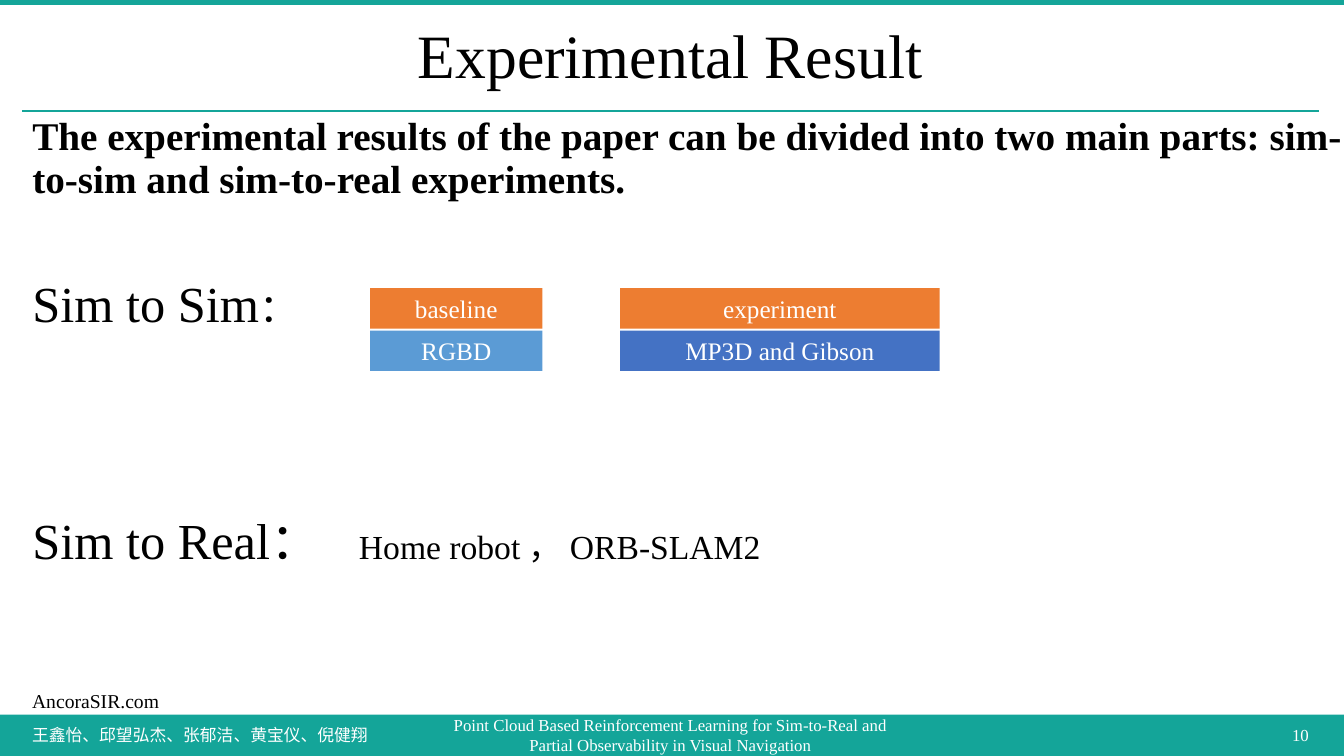
from dataclasses import dataclass

from lxml.etree import SubElement
from pptx import Presentation
from pptx.dml.color import RGBColor
from pptx.enum.shapes import MSO_CONNECTOR, MSO_SHAPE
from pptx.enum.text import MSO_ANCHOR, MSO_AUTO_SIZE, PP_ALIGN
from pptx.oxml.ns import qn
from pptx.util import Inches, Pt

FONT = "Times New Roman"
TEAL, WHITE, BLACK, ORANGE = "14A599", "FFFFFF", "000000", "ED7D31"
LEFT, WIDTH = 0.22, 12.86
FOOTER_TOP, FOOTER_HEIGHT = 7.09, 0.4
BOX_TOP, BOX_HEIGHT, BOX_STEP = 2.86, 0.4, 0.42


@dataclass
class Label:
    text: str
    left: float
    top: float
    width: float
    height: float
    size: int = 12
    color: str = WHITE
    align: PP_ALIGN = PP_ALIGN.LEFT
    wrap: bool = True


@dataclass
class BoxColumn:
    left: float
    width: float
    rows: list[tuple[str, str]]


@dataclass
class BodyRun:
    text: str
    size: int
    spacing: int = 0


@dataclass
class BodyLine:
    runs: list[BodyRun]
    before: int = 0
    bold: bool = False


LABELS = [
    Label("AncoraSIR.com", LEFT, 6.78, 1.47, 0.34, 14, BLACK, wrap=False),
    Label("10", 8.25, FOOTER_TOP, 4.83, FOOTER_HEIGHT, align=PP_ALIGN.RIGHT),
    Label("Point Cloud Based Reinforcement Learning for Sim-to-Real and "
          "Partial Observability in Visual Navigation",
          4.4, FOOTER_TOP, 4.5, FOOTER_HEIGHT, align=PP_ALIGN.CENTER),
    Label("王鑫怡、邱望弘杰、张郁洁、黄宝仪、倪健翔",
          LEFT, FOOTER_TOP, 4.86, FOOTER_HEIGHT),
]
COLUMNS = [
    BoxColumn(3.67, 1.71, [("baseline", ORANGE), ("RGBD", "5B9BD5")]),
    BoxColumn(6.15, 3.17, [("experiment", ORANGE), ("MP3D and Gibson", "4472C4")]),
]
BODY = [
    BodyLine([BodyRun("The experimental results of the paper can be divided into two "
                      "main parts: sim-to-sim and sim-to-real experiments.", 28)],
             bold=True),
    BodyLine([BodyRun("Sim to Sim", 36), BodyRun("：", 28)], before=55),
    BodyLine([BodyRun("Sim to Real：", 36), BodyRun(" ", 28, spacing=21),
              BodyRun("Home robot ， ORB-SLAM2", 24)], before=131),
]


def rgb(color: str) -> RGBColor:
    return RGBColor.from_string(color)


def style(font, size: int, color: str, bold: bool = False) -> None:
    font.name = FONT
    font.size = Pt(size)
    font.bold = bold
    font.color.rgb = rgb(color)


def place(sp, left: float, top: float, width: float, height: float) -> None:
    sp.left, sp.top = Inches(left), Inches(top)
    sp.width, sp.height = Inches(width), Inches(height)


def set_text(sp, text: str, size: int, color: str, align: PP_ALIGN) -> None:
    tf = sp.text_frame
    tf.text = text
    tf.vertical_anchor = MSO_ANCHOR.MIDDLE
    p = tf.paragraphs[0]
    p.alignment = align
    style(p.runs[0].font, size, color)


def add_rect(s, left: float, top: float, width: float, height: float, color: str):
    sp = s.shapes.add_shape(MSO_SHAPE.RECTANGLE, Inches(left), Inches(top),
                            Inches(width), Inches(height))
    sp.shadow.inherit = False
    sp.fill.solid()
    sp.fill.fore_color.rgb = rgb(color)
    sp.line.fill.background()
    return sp


def add_label(s, label: Label) -> None:
    sp = s.shapes.add_textbox(Inches(label.left), Inches(label.top),
                              Inches(label.width), Inches(label.height))
    sp.text_frame.word_wrap = label.wrap
    set_text(sp, label.text, label.size, label.color, label.align)


def add_body_line(p, line: BodyLine) -> None:
    pPr = p._p.get_or_add_pPr()
    pPr.set("marL", "0")
    pPr.set("indent", "0")
    SubElement(pPr, qn("a:buNone"))
    p.line_spacing = 0.9
    p.space_before = Pt(line.before)
    for run in line.runs:
        r = p.add_run()
        r.text = run.text
        style(r.font, run.size, BLACK, line.bold)
        if run.spacing:
            r._r.get_or_add_rPr().set("spc", str(run.spacing * 100))


def main() -> None:
    prs = Presentation()
    prs.slide_width, prs.slide_height = Inches(13.33), Inches(7.5)
    s = prs.slides.add_slide(prs.slide_layouts[1])
    title, body = s.shapes.title, s.placeholders[1]

    # Teal background with a white panel and a rule under the title
    s.background.fill.solid()
    s.background.fill.fore_color.rgb = rgb(TEAL)
    panel = add_rect(s, 0, 0.05, 13.33, 7.04, WHITE)
    rule = s.shapes.add_connector(MSO_CONNECTOR.STRAIGHT, Inches(LEFT), Inches(1.1),
                                  Inches(LEFT + WIDTH), Inches(1.1))
    rule.line.color.rgb = rgb(TEAL)
    rule.line.width = Pt(1)
    SubElement(rule.element.spPr, qn("a:effectLst"))
    for sp in (panel, rule):
        title.element.addprevious(sp.element)

    # Title
    place(title, LEFT, 0.08, WIDTH, 1.01)
    set_text(title, "Experimental Result", 44, BLACK, PP_ALIGN.CENTER)
    title.text_frame.paragraphs[0].line_spacing = 0.9

    # Body
    place(body, LEFT, 1.11, 13.31, 7.17)
    tf = body.text_frame
    tf.auto_size = MSO_AUTO_SIZE.NONE
    for i, line in enumerate(BODY):
        add_body_line(tf.paragraphs[0] if i == 0 else tf.add_paragraph(), line)

    # Sim-to-sim boxes
    for column in COLUMNS:
        for row, (text, color) in enumerate(column.rows):
            sp = add_rect(s, column.left, BOX_TOP + row * BOX_STEP,
                          column.width, BOX_HEIGHT, color)
            set_text(sp, text, 18, WHITE, PP_ALIGN.CENTER)

    # Site address and footer
    for label in LABELS:
        add_label(s, label)

    prs.save("out.pptx")


if __name__ == "__main__":
    main()
